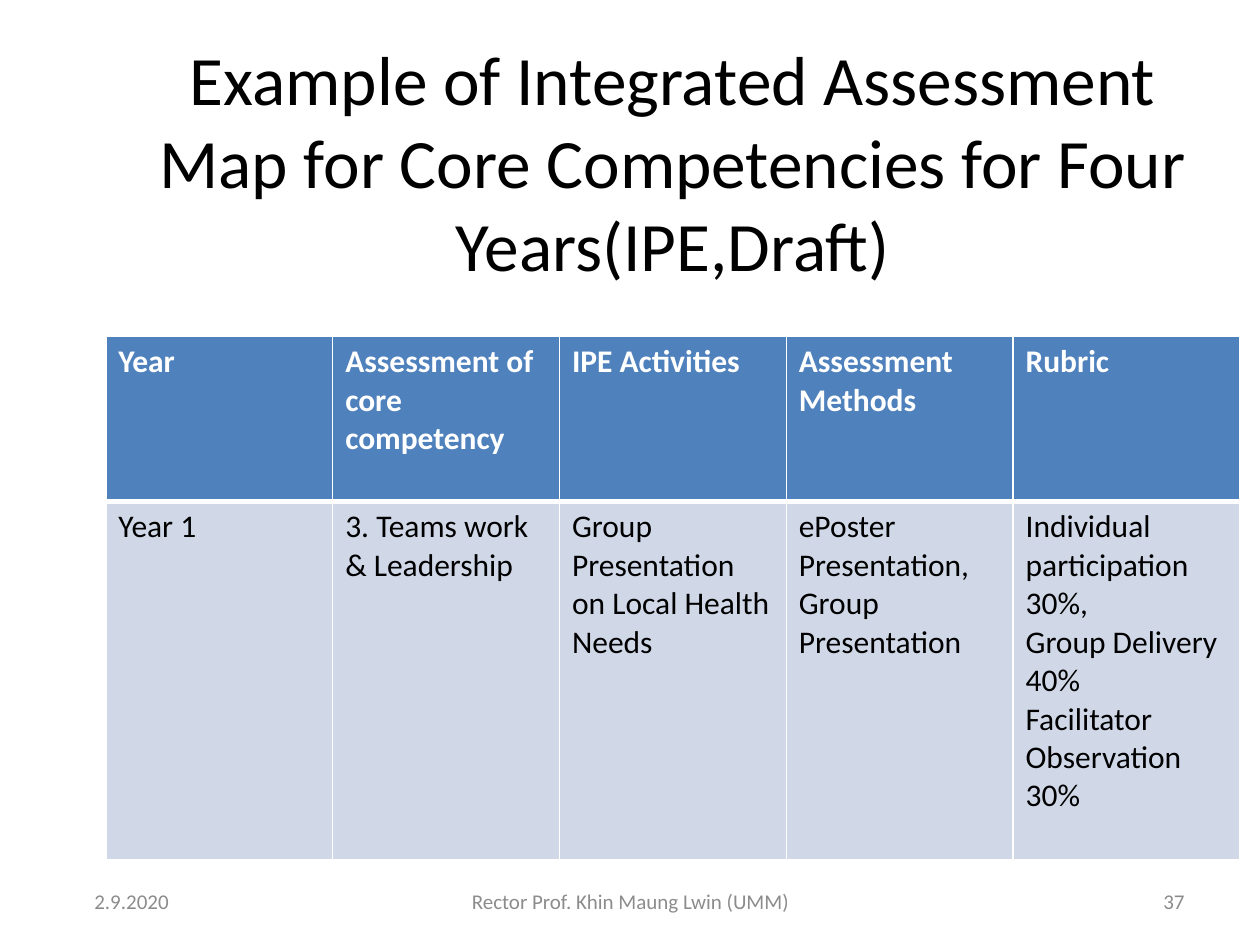
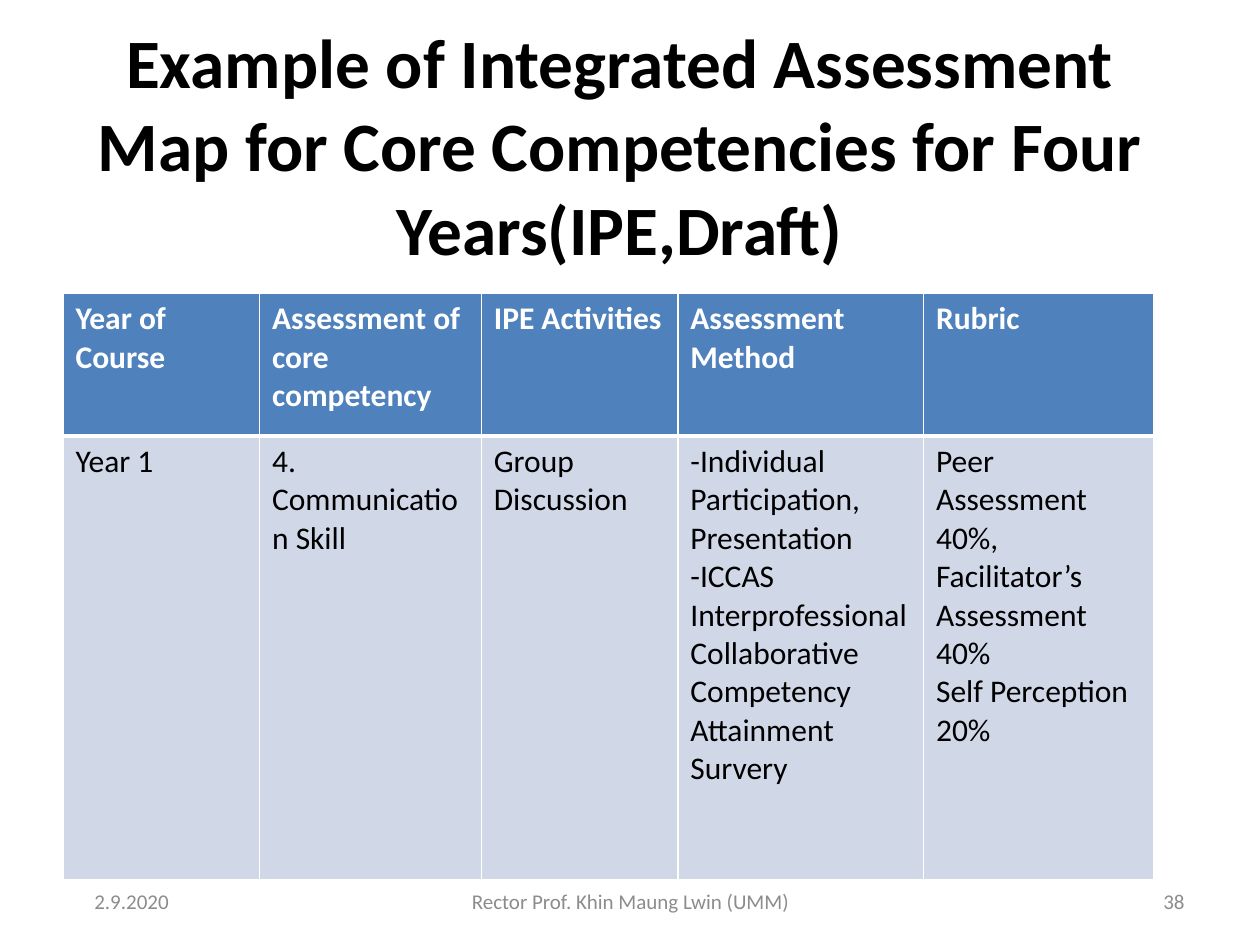
"""Builds two assessment map slides, each with a title, a table and a footer."""
from lxml import etree
from pptx import Presentation
from pptx import util as u
from pptx.dml import color
from pptx.enum import text
from pptx.oxml import ns

FONT = "Calibri"
WHITE, BLACK, GREY = "FFFFFF", "000000", "8C8C8C"
HEADER_FILL, BODY_FILL = "4F81BD", "D0D8E8"
TITLE = "Example of Integrated Assessment Map for Core Competencies for Four Years(IPE,Draft)"
DATE, AUTHOR = "2.9.2020", "Rector Prof. Khin Maung Lwin (UMM)"
ALIGN = text.PP_ALIGN


def rgb(value):
    """Return the colour for a hex string."""
    return color.RGBColor.from_string(value)


def inches(values):
    """Return each number as a length in inches."""
    return [u.Inches(value) for value in values]


def write(frame, lines, size, ink, bold=False, align=ALIGN.LEFT):
    """Write one paragraph with one run for each line."""
    frame.word_wrap = True
    for index, line in enumerate(lines):
        para = frame.add_paragraph() if index else frame.paragraphs[0]
        para.alignment = align
        span = para.add_run()
        span.text = line
        span.font.name, span.font.size, span.font.bold = FONT, u.Pt(size), bold
        span.font.color.rgb = rgb(ink)


def add_title(page, box, bold):
    """Move the title placeholder to its box and fill it."""
    title = page.shapes.title
    title.left, title.top, title.width, title.height = inches(box)
    frame = title.text_frame
    frame.auto_size = text.MSO_AUTO_SIZE.NONE
    frame.vertical_anchor = text.MSO_ANCHOR.MIDDLE
    write(frame, [TITLE], 39.6, BLACK, bold, ALIGN.CENTER)


def add_borders(cell, widths):
    """Draw white cell borders, with widths in points for each side."""
    properties = cell._tc.get_or_add_tcPr()
    for side, width in widths.items():
        line = etree.SubElement(properties, ns.qn(f"a:ln{side}"), w=str(u.Pt(width)))
        fill = etree.SubElement(line, ns.qn("a:solidFill"))
        etree.SubElement(fill, ns.qn("a:srgbClr"), val=WHITE)


def add_map(page, left, top, widths, heights, rows):
    """Add the assessment table with a header row and a body row."""
    frame = page.shapes.add_table(
        len(rows), len(widths), *inches((left, top, sum(widths), sum(heights))))
    table = frame.table
    for column, width in zip(table.columns, widths):
        column.width = u.Inches(width)
    for number, (height, row) in enumerate(zip(heights, rows)):
        header = number == 0
        table.rows[number].height = u.Inches(height)
        for cell, entry in zip(table.rows[number].cells, row):
            add_borders(cell, {"L": 1, "R": 1, "T": 1 if header else 3, "B": 3 if header else 1})
            cell.fill.solid()
            cell.fill.fore_color.rgb = rgb(HEADER_FILL if header else BODY_FILL)
            write(cell.text_frame, entry.split("\n"), 18, WHITE if header else BLACK, header)


def add_footer(page, number, top=6.95, height=0.4):
    """Add the date, the author and the page number."""
    parts = ((0.65, 2.18, DATE, ALIGN.LEFT),
             (3.42, 3.17, AUTHOR, ALIGN.CENTER),
             (7.17, 2.33, str(number), ALIGN.RIGHT))
    for left, width, words, align in parts:
        box = page.shapes.add_textbox(*inches((left, top, width, height)))
        box.text_frame.vertical_anchor = text.MSO_ANCHOR.MIDDLE
        write(box.text_frame, [words], 12, GREY, align=align)


def add_page(deck, number, title_box, bold, **table):
    """Add one assessment map slide."""
    page = deck.slides.add_slide(deck.slide_layouts.get_by_name("Title Only"))
    add_title(page, title_box, bold)
    add_map(page, **table)
    add_footer(page, number)


def main():
    """Build and save the deck."""
    deck = Presentation()
    deck.slide_width, deck.slide_height = inches((10, 7.5))
    add_page(deck, 37, (0.84, 0.65, 9, 1.25), False,
             left=0.84, top=2.67, widths=[1.8] * 5, heights=[1.31, 2.84], rows=[
                 ["Year", "Assessment of core competency", "IPE Activities",
                  "Assessment Methods", "Rubric"],
                 ["Year 1", "3. Teams work & Leadership",
                  "Group Presentation on Local Health Needs",
                  "ePoster Presentation,\nGroup Presentation",
                  "Individual participation 30%,\nGroup Delivery 40%\n"
                  "Facilitator Observation\n30%"]])
    add_page(deck, 38, (0.42, 0.52, 9, 1.25), True,
             left=0.5, top=2.33, widths=[1.56, 1.76, 1.56, 1.95, 1.83],
             heights=[1.13, 3.52], rows=[
                 ["Year of Course", "Assessment of core competency", "IPE Activities",
                  "Assessment Method", "Rubric"],
                 ["Year 1", "4. Communication Skill", "Group Discussion",
                  "-Individual Participation, Presentation\n-ICCAS Interprofessional "
                  "Collaborative Competency Attainment Survery",
                  "Peer Assessment 40%,\nFacilitator’s Assessment\n40%\n"
                  "Self Perception\n20%"]])
    deck.save("out.pptx")


if __name__ == "__main__":
    main()
